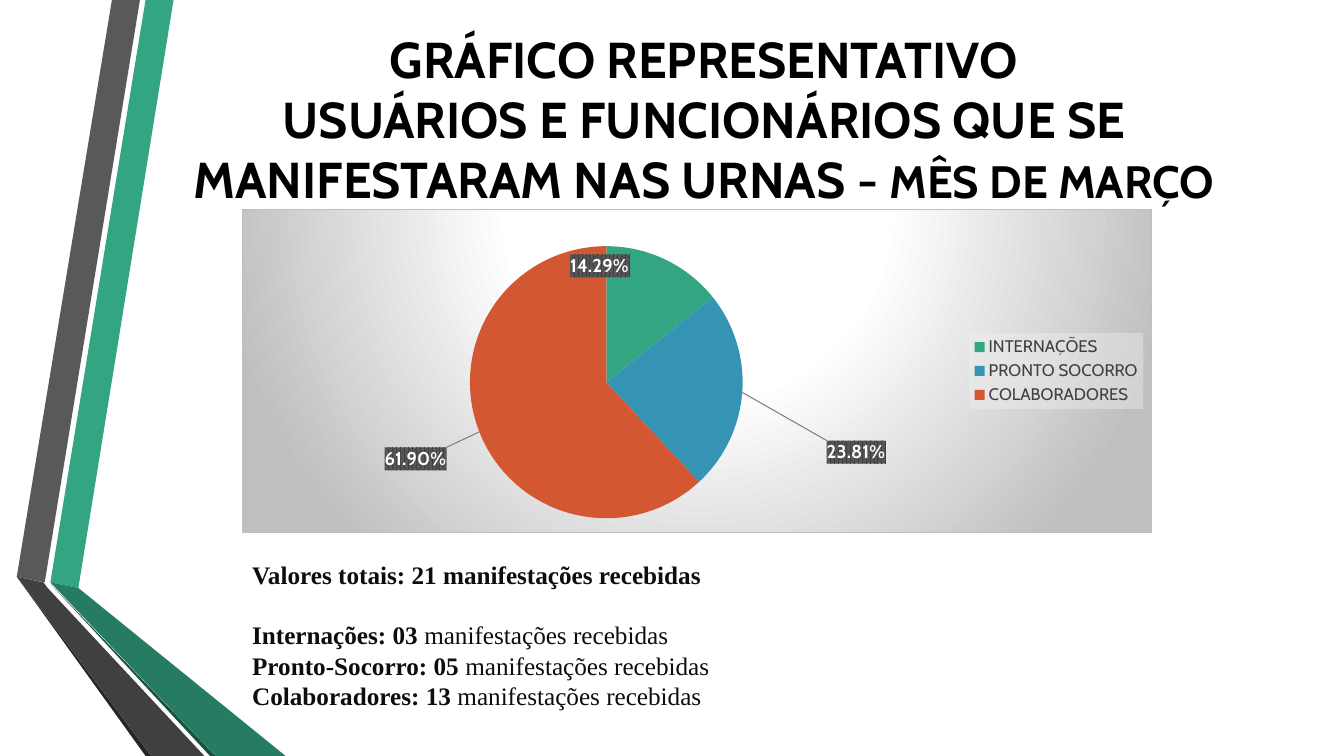
from dataclasses import dataclass

from pptx import Presentation
from pptx.chart.data import CategoryChartData
from pptx.dml.color import RGBColor
from pptx.enum.chart import XL_CHART_TYPE, XL_LEGEND_POSITION
from pptx.enum.text import MSO_ANCHOR, PP_ALIGN
from pptx.oxml import parse_xml
from pptx.oxml.ns import nsdecls
from pptx.util import Pt


@dataclass(frozen=True)
class Theme:
    heading: str = "Cabin"
    body: str = "Times New Roman"
    black: str = "000000"
    ink: str = "0D0D0D"
    legend: str = "404040"
    white: str = "FFFFFF"
    silver: str = "BFBFBF"
    label_dark: str = "404040"
    label_light: str = "595959"
    legend_back: str = "F2F2F2"
    leader: str = "7F7F7F"
    title_size: float = 36
    month_size: float = 32.4
    body_size: float = 18
    label_size: float = 13.3
    legend_size: float = 12
    chart_size: float = 10


THEME = Theme()

# Ribbon outlines in points, from back to front
RIBBONS = [
    ("33A583", [(36, 416), (55.5, 419.5), (124.5, 0), (104.5, 0)]),
    ("595959", [(100, 0), (80, 0), (11.5, 412.5), (31.5, 415.5)]),
    ("262626", [(11.5, 412.5), (104.5, 540), (108.5, 540)]),
    ("1A5242", [(36, 417), (150, 540), (154, 540)]),
    ("267C62", [(36, 416.5), (154, 540), (203.5, 540), (55.5, 419.5)]),
    ("404040", [(145.5, 540), (34.5, 419.5), (31, 415.5), (11.5, 412.5), (108.5, 540)]),
]

# Category, percentage, colour, label shift as a share of the chart
SLICES = [
    ("INTERNAÇÕES", 14.29, "33A583", (-0.04, -0.17)),
    ("PRONTO SOCORRO", 23.81, "3594B4", (0.2, 0.2)),
    ("COLABORADORES", 61.9, "D35731", (-0.14, 0.16)),
]

TOTALS = [
    ("Valores totais: 21 manifestações recebidas", ""),
    ("Internações: 03 ", "manifestações recebidas"),
    ("Pronto-Socorro: 05 ", "manifestações recebidas"),
    ("Colaboradores: 13 ", "manifestações recebidas"),
]


def set_all(target, values):
    for name, value in values.items():
        setattr(target, name, value)


def set_font(font, name, size, color, bold=False):
    set_all(font, {"name": name, "size": Pt(size), "bold": bold})
    font.color.rgb = RGBColor.from_string(color)


def add_run(p, text, *font):
    r = p.add_run()
    r.text = text
    set_font(r.font, *font)


def add_text_frame(s, box, anchor):
    tf = s.shapes.add_textbox(*map(Pt, box)).text_frame
    set_all(tf, {"word_wrap": True, "vertical_anchor": anchor})
    return tf


def add_ribbons(s, box):
    left, top = box[:2]
    for color, outline in RIBBONS:
        points = [(left + x, top + y) for x, y in outline]
        builder = s.shapes.build_freeform(*points[0], scale=Pt(1))
        builder.add_line_segments(points[1:], close=True)
        sp = builder.convert_to_shape()
        sp.shadow.inherit = False
        sp.fill.solid()
        sp.fill.fore_color.rgb = RGBColor.from_string(color)
        sp.line.fill.background()


def add_title(s, box):
    p = add_text_frame(s, box, MSO_ANCHOR.MIDDLE).paragraphs[0]
    p.alignment = PP_ALIGN.CENTER
    font = (THEME.heading, THEME.title_size, THEME.black, True)
    add_run(p, "GRÁFICO REPRESENTATIVO", *font)
    p.add_line_break()
    add_run(p, "USUÁRIOS E FUNCIONÁRIOS QUE SE MANIFESTARAM NAS URNAS - ", *font)
    add_run(p, "MÊS DE MARÇO", THEME.heading, THEME.month_size, THEME.black, True)


def solid(color, extra=""):
    return f'<a:solidFill><a:srgbClr val="{color}">{extra}</a:srgbClr></a:solidFill>'


def chart_part(tag, inner):
    return parse_xml(f'<c:{tag} {nsdecls("c", "a")}>{inner}</c:{tag}>')


def labels_xml():
    """Percent labels on a dark pattern, each moved off its slice centre."""
    look = (
        '<c:numFmt formatCode="0.00%" sourceLinked="0"/>'
        '<c:spPr><a:pattFill prst="pct75">'
        f'<a:fgClr><a:srgbClr val="{THEME.label_dark}"/></a:fgClr>'
        f'<a:bgClr><a:srgbClr val="{THEME.label_light}"/></a:bgClr>'
        '</a:pattFill><a:ln><a:noFill/></a:ln></c:spPr>'
        '<c:txPr><a:bodyPr/><a:p><a:pPr>'
        f'<a:defRPr sz="{THEME.label_size * 100:.0f}" b="1">{solid(THEME.white)}'
        f'<a:latin typeface="{THEME.heading}"/></a:defRPr></a:pPr></a:p></c:txPr>'
        '<c:dLblPos val="ctr"/><c:showLegendKey val="0"/><c:showVal val="0"/>'
        '<c:showCatName val="0"/><c:showSerName val="0"/>'
        '<c:showPercent val="1"/><c:showBubbleSize val="0"/>'
    )
    moved = "".join(
        f'<c:dLbl><c:idx val="{i}"/><c:layout><c:manualLayout>'
        f'<c:x val="{x}"/><c:y val="{y}"/></c:manualLayout></c:layout>{look}</c:dLbl>'
        for i, (*_, (x, y)) in enumerate(SLICES)
    )
    leaders = (
        '<c:showLeaderLines val="1"/><c:leaderLines><c:spPr>'
        f'<a:ln w="9525">{solid(THEME.leader)}</a:ln></c:spPr></c:leaderLines>'
    )
    return moved + look + leaders


def style_chart_areas(chart):
    """Radial backdrop, fixed pie place and translucent legend."""
    stops = "".join(
        f'<a:gs pos="{pos}000"><a:srgbClr val="{color}"/></a:gs>'
        for pos, color in [(0, THEME.white), (39, THEME.white), (100, THEME.silver)]
    )
    backdrop = (
        f'<a:gradFill><a:gsLst>{stops}</a:gsLst><a:path path="circle">'
        '<a:fillToRect l="50000" t="-80000" r="50000" b="180000"/></a:path></a:gradFill>'
        f'<a:ln w="9525">{solid(THEME.silver)}</a:ln>'
    )
    root = chart.element
    root.chart.addnext(chart_part("spPr", backdrop))

    place = {"x": 0.25, "y": 0.11, "w": 0.3, "h": 0.85}
    layout = (
        '<c:manualLayout><c:layoutTarget val="inner"/>'
        '<c:xMode val="edge"/><c:yMode val="edge"/>'
        + "".join(f'<c:{key} val="{value}"/>' for key, value in place.items())
        + '</c:manualLayout>'
    )
    plot_area = root.chart.plotArea
    for old in plot_area.xpath("c:layout"):
        plot_area.remove(old)
    plot_area.insert(0, chart_part("layout", layout))

    legend_fill = solid(THEME.legend_back, '<a:alpha val="39000"/>')
    text = root.xpath("c:chart/c:legend/c:txPr")[0]
    text.addprevious(chart_part("spPr", legend_fill))


def add_pie(s, box):
    data = CategoryChartData()
    data.categories = [name for name, *_ in SLICES]
    data.add_series("Series 1", [value for _, value, *_ in SLICES])
    chart = s.shapes.add_chart(XL_CHART_TYPE.PIE, *map(Pt, box), data).chart
    set_all(chart, {"has_title": False, "has_legend": True})
    set_font(chart.font, THEME.heading, THEME.chart_size, THEME.black)
    set_all(chart.legend, {"position": XL_LEGEND_POSITION.RIGHT, "include_in_layout": False})
    set_font(chart.legend.font, THEME.heading, THEME.legend_size, THEME.legend)

    plot = chart.plots[0]
    plot.vary_by_categories = True
    series = plot.series[0]
    for i, (_, _, color, _) in enumerate(SLICES):
        fill = series.points[i].format.fill
        fill.solid()
        fill.fore_color.rgb = RGBColor.from_string(color)
    categories = series._element.xpath("c:cat")[0]
    categories.addprevious(chart_part("dLbls", labels_xml()))
    style_chart_areas(chart)


def add_totals(s, box):
    tf = add_text_frame(s, box, MSO_ANCHOR.TOP)
    for i, (strong, plain) in enumerate(TOTALS):
        p = tf.add_paragraph() if i else tf.paragraphs[0]
        set_all(p, {"alignment": PP_ALIGN.JUSTIFY, "space_after": Pt(0 if i else 21.5)})
        add_run(p, strong, THEME.body, THEME.body_size, THEME.ink, True)
        if plain:
            add_run(p, plain, THEME.body, THEME.body_size, THEME.ink)


def main():
    prs = Presentation()
    set_all(prs, {"slide_width": Pt(960), "slide_height": Pt(540)})
    s = prs.slides.add_slide(prs.slide_layouts[6])
    add_ribbons(s, (0, 0, 204, 540))
    add_title(s, (88, 20, 829.5, 129))
    add_pie(s, (173, 149, 650, 232))
    add_totals(s, (173, 396, 650, 117))
    prs.save("out.pptx")


if __name__ == "__main__":
    main()
